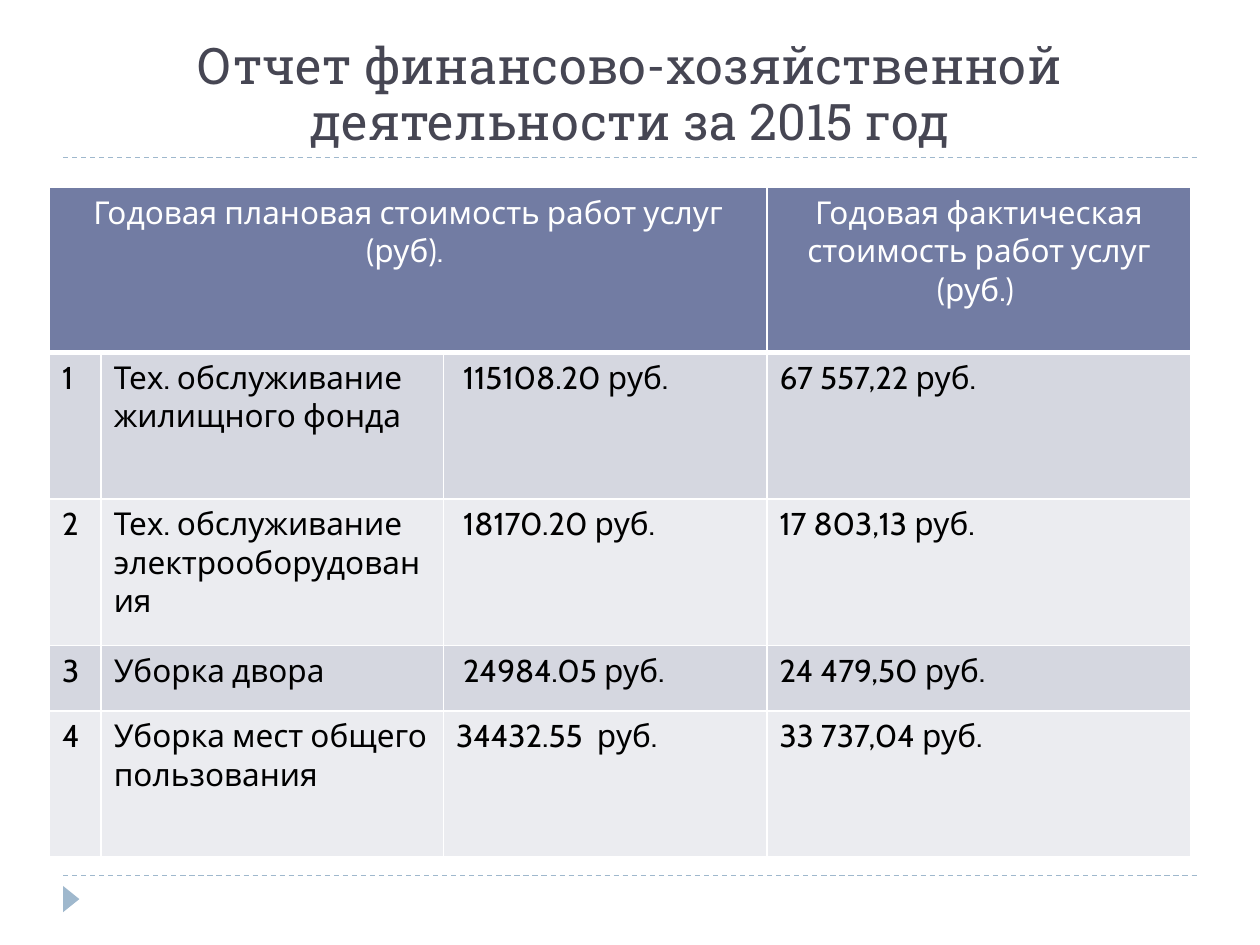
from lxml import etree
from pptx import Presentation
from pptx.dml.color import RGBColor
from pptx.enum.dml import MSO_LINE
from pptx.enum.shapes import MSO_CONNECTOR, MSO_SHAPE
from pptx.enum.text import MSO_ANCHOR, PP_ALIGN
from pptx.oxml.ns import qn
from pptx.util import Cm, Pt

LEFT, MID = PP_ALIGN.LEFT, PP_ALIGN.CENTER
BASE = MSO_ANCHOR.BOTTOM
DASH = MSO_LINE.DASH
LINE = MSO_CONNECTOR.STRAIGHT
ARROW = MSO_SHAPE.ISOSCELES_TRIANGLE

HEADS = {0: "Годовая плановая стоимость работ услуг (руб). ",
         3: "Годовая фактическая стоимость работ услуг (руб.) "}
ROWS = [
    ("1", "Тех. обслуживание жилищного фонда", " 115108.20 руб.", "67 557,22 руб."),
    ("2", "Тех. обслуживание электрооборудования", " 18170.20 руб.", "17 803,13 руб."),
    ("3", "Уборка двора", " 24984.05 руб.", "24 479,50 руб."),
    ("4", "Уборка мест общего пользования", "34432.55  руб.", "33 737,04 руб."),
]
WIDTHS = [1.04, 6.9, 6.52, 8.55]
HEIGHTS = [3.33, 2.95, 2.95, 1.32, 2.95]


def paint(code):
    return RGBColor.from_string(code)


def write(frame, text, size=18, font="Cabin", color="000000", align=LEFT, space=None):
    frame.word_wrap = True
    para = frame.paragraphs[0]
    para.alignment = align
    para.line_spacing = space
    run = para.add_run()
    run.text = text
    run.font.size = Pt(size)
    run.font.name = font
    run.font.bold = False
    run.font.color.rgb = paint(color)


class Page:
    accent = "9FB8CD"
    head = "727CA3"
    bands = ("D5D7E0", "EBECF0")
    white = "FFFFFF"

    def __init__(self, deck):
        self.slide = deck.slides.add_slide(deck.slide_layouts[5])
        self.shapes = self.slide.shapes

    def title(self, text, x, y, w, h):
        box = self.shapes.title
        box.left, box.top, box.width, box.height = Cm(x), Cm(y), Cm(w), Cm(h)
        box.text_frame.vertical_anchor = BASE
        write(box.text_frame, text, size=28.8, font="Roboto Slab",
              color="464653", align=MID, space=0.92)

    def rule(self, x, y, w):
        line = self.shapes.add_connector(LINE, Cm(x), Cm(y), Cm(x + w), Cm(y))
        line.line.color.rgb = paint(self.accent)
        line.line.width = Pt(0.75)
        line.line.dash_style = DASH
        etree.SubElement(line._element.spPr, qn("a:effectLst"))

    def arrow(self, x, y, w, h):
        mark = self.shapes.add_shape(ARROW, Cm(x), Cm(y), Cm(w), Cm(h))
        mark.rotation = 90
        mark.shadow.inherit = False
        mark.fill.solid()
        mark.fill.fore_color.rgb = paint(self.accent)
        mark.line.fill.background()

    def edge(self, cell, base):
        props = cell._tc.get_or_add_tcPr()
        sides = {"L": 1, "R": 1, "T": 1, "B": base}
        for i, (side, width) in enumerate(sides.items()):
            line = etree.Element(qn(f"a:ln{side}"), w=str(Pt(width)))
            fill = etree.SubElement(line, qn("a:solidFill"))
            etree.SubElement(fill, qn("a:srgbClr"), val=self.white)
            props.insert(i, line)

    def table(self, heads, rows, x, y, widths, heights):
        grid = self.shapes.add_table(len(heights), len(widths), Cm(x), Cm(y),
                                     Cm(sum(widths)), Cm(sum(heights))).table
        for col, width in zip(grid.columns, widths):
            col.width = Cm(width)
        for row, height in zip(grid.rows, heights):
            row.height = Cm(height)
        grid.cell(0, 0).merge(grid.cell(0, 2))
        for r in range(len(heights)):
            for c in range(len(widths)):
                cell = grid.cell(r, c)
                cell.fill.solid()
                tint = self.bands[(r - 1) % 2] if r else self.head
                cell.fill.fore_color.rgb = paint(tint)
                self.edge(cell, 1 if r else 3)
                if r:
                    write(cell.text_frame, rows[r - 1][c])
                elif c in heads:
                    write(cell.text_frame, heads[c], color=self.white, align=MID)


def main():
    deck = Presentation()
    deck.slide_width, deck.slide_height = Cm(25.4), Cm(19.05)
    page = Page(deck)
    for y in (17.65, 3.18):
        page.rule(1.27, y, 22.86)
    page.arrow(1.17, 17.96, 0.53, 0.33)
    page.title("Отчет финансово-хозяйственной деятельности за 2015 год",
               1.27, 0.64, 22.86, 2.54)
    page.table(HEADS, ROWS, 1, 3.78, WIDTHS, HEIGHTS)
    deck.save("out.pptx")


if __name__ == "__main__":
    main()
